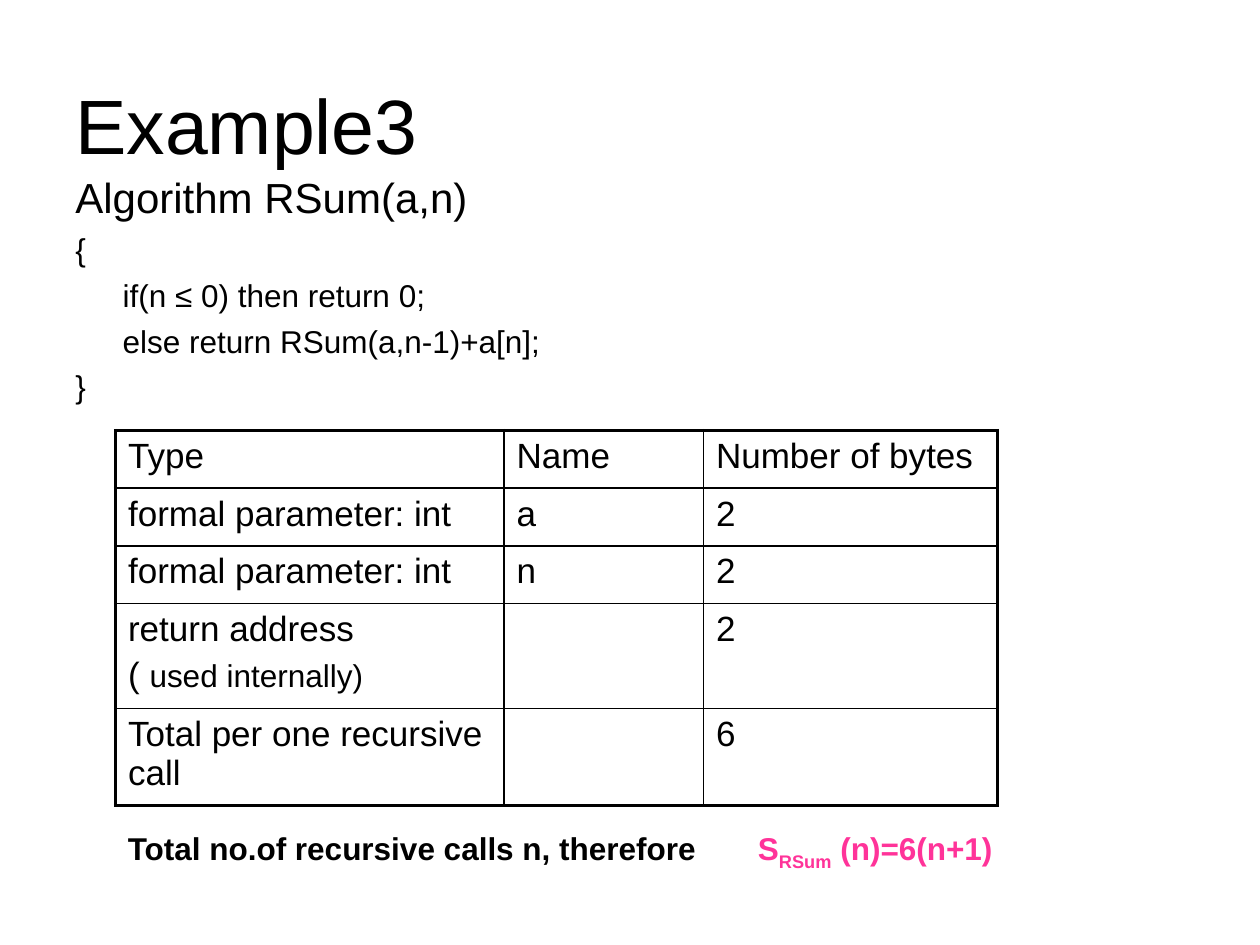
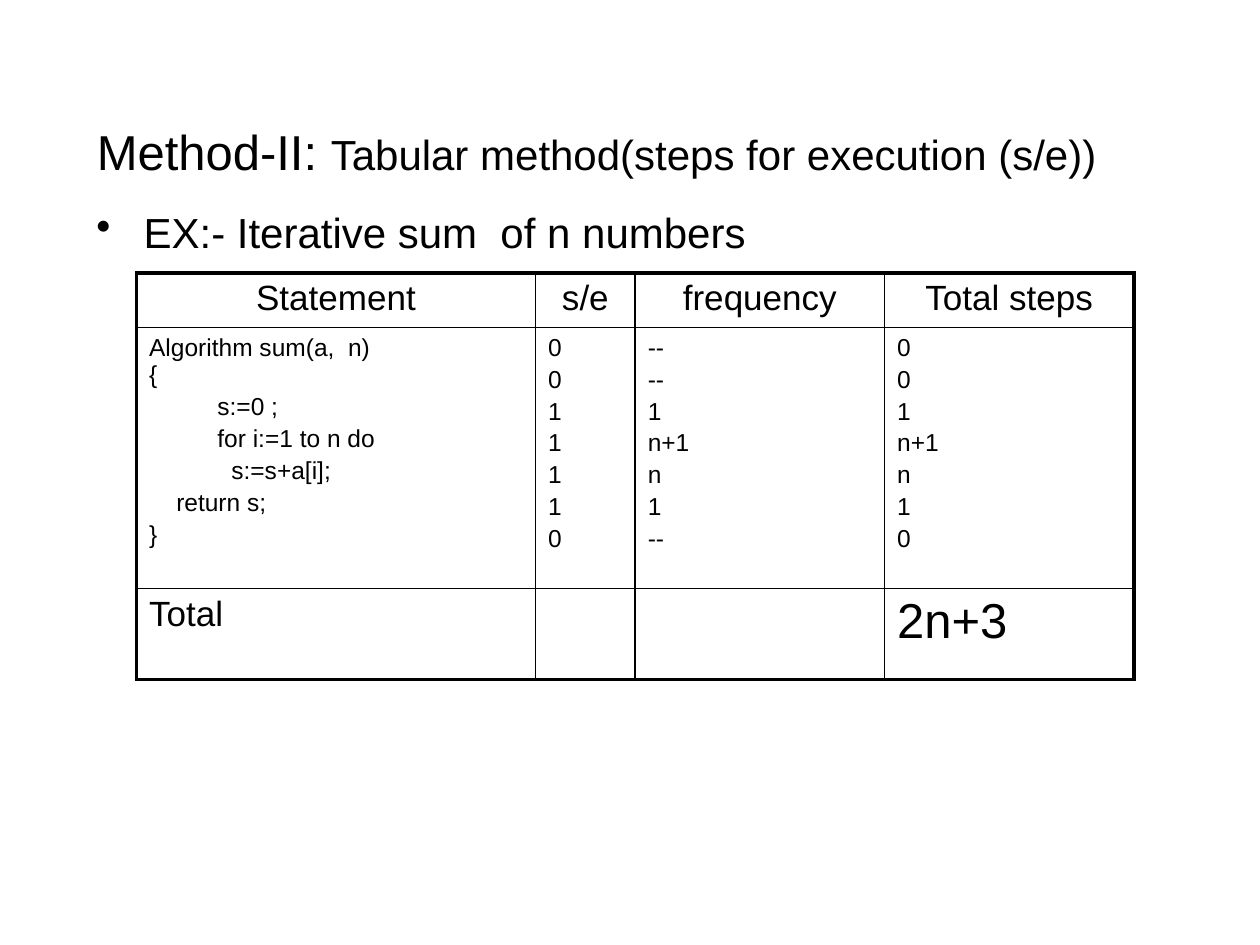
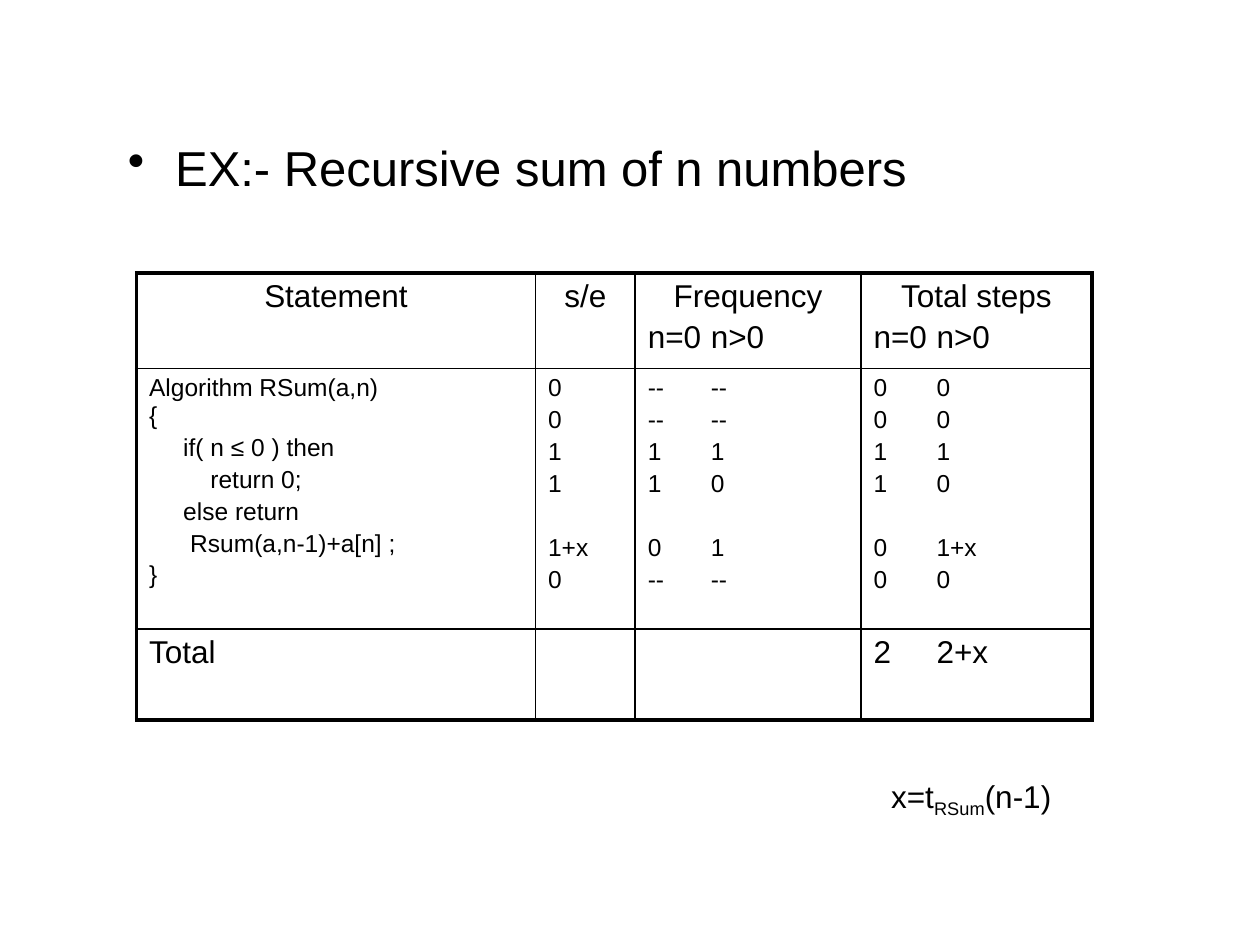
from dataclasses import dataclass

from lxml import etree
from pptx import Presentation
from pptx import util as u
from pptx.dml.color import RGBColor
from pptx.enum import shapes, text
from pptx.oxml.ns import qn


@dataclass(frozen=True)
class Theme:
    font: str = "Arial"
    ink: str = "000000"
    paper: str = "FFFFFF"
    accent: str = "FF3399"
    title: float = 44
    heading: float = 28
    body: float = 24
    cell: float = 20
    small: float = 18
    code: float = 14
    leading: float = 0.18  # space before a line, as a share of its size
    hanging: float = 27
    outer_border: float = 2.25
    inner_border: float = 1
    row_heights: tuple = (149, 52)  # statement and total rows


THEME = Theme()
CENTER = text.PP_ALIGN.CENTER
MIDDLE = text.MSO_ANCHOR.MIDDLE
TOP = text.MSO_ANCHOR.TOP


# Text
def line(content, **format):
    """A line with its own format; content is a string or a list of runs."""
    return content, format


def write_run(paragraph, content, size, bold=False, color=THEME.ink, subscript=False):
    run = paragraph.add_run()
    run.text = content
    font = run.font
    font.name, font.size, font.bold = THEME.font, u.Pt(size), bold
    font.color.rgb = RGBColor.from_string(color)
    if subscript:
        run._r.get_or_add_rPr().set("baseline", "-25000")


def write_paragraph(paragraph, content, size=THEME.small, bold=False, align=None,
                    before=0, indent=0, bullet=False, tab=None):
    paragraph.alignment = align
    paragraph.space_before = u.Pt(before)
    properties = paragraph._p.get_or_add_pPr()
    properties.set("marL", str(u.Pt(THEME.hanging if bullet else indent)))
    properties.set("indent", str(u.Pt(-THEME.hanging if bullet else 0)))
    if bullet:
        etree.SubElement(properties, qn("a:buChar"), char="•")
    if tab:
        stops = etree.SubElement(properties, qn("a:tabLst"))
        etree.SubElement(stops, qn("a:tab"), pos=str(u.Pt(tab)), algn="l")
    for run in [(content, {})] if isinstance(content, str) else content:
        run_text, run_format = run
        write_run(paragraph, run_text, **{"size": size, "bold": bold, **run_format})


def write_lines(frame, lines, **shared):
    for number, item in enumerate(lines):
        content, own = (item, {}) if isinstance(item, str) else item
        format = {**shared, **own}
        if number:
            format.setdefault("before", round(THEME.leading * format["size"], 1))
        paragraph = frame.add_paragraph() if number else frame.paragraphs[0]
        write_paragraph(paragraph, content, **format)


# Boxes
def set_frame(frame, anchor, inset_left, inset_top):
    frame.word_wrap = True
    frame.vertical_anchor = anchor
    frame.margin_left, frame.margin_top = u.Pt(inset_left), u.Pt(inset_top)


def add_text(slide, box, lines, anchor=TOP, inset_left=7.2, inset_top=6.5, **format):
    shape = slide.shapes.add_textbox(*map(u.Pt, box))
    set_frame(shape.text_frame, anchor, inset_left, inset_top)
    write_lines(shape.text_frame, lines, **format)


def add_panel(slide, box, lines, anchor=MIDDLE, inset_top=3.6, **format):
    shape = slide.shapes.add_shape(shapes.MSO_SHAPE.RECTANGLE, *map(u.Pt, box))
    shape.shadow.inherit = False
    shape.fill.solid()
    shape.fill.fore_color.rgb = RGBColor.from_string(THEME.paper)
    shape.line.color.rgb = RGBColor.from_string(THEME.paper)
    shape.line.width = u.Pt(0.75)
    set_frame(shape.text_frame, anchor, 7.2, inset_top)
    write_lines(shape.text_frame, lines, **format)


# Tables
def set_borders(cell, outer_edges):
    properties = cell._tc.get_or_add_tcPr()
    for position, (edge, is_outer) in enumerate(outer_edges.items()):
        width = THEME.outer_border if is_outer else THEME.inner_border
        border = etree.Element(qn(f"a:{edge}"), w=str(u.Pt(width)))
        fill = etree.SubElement(border, qn("a:solidFill"))
        etree.SubElement(fill, qn("a:srgbClr"), val=THEME.ink)
        properties.insert(position, border)


def add_grid(slide, left, top, widths, heights, rows, **shared):
    """Each cell is a list of lines, or a pair of such a list and its format."""
    frame = slide.shapes.add_table(len(heights), len(widths), u.Pt(left), u.Pt(top),
                                   u.Pt(sum(widths)), u.Pt(sum(heights)))
    table = frame.table
    table.first_row = table.horz_banding = False
    for column, width in zip(table.columns, widths):
        column.width = u.Pt(width)
    for row, height in zip(table.rows, heights):
        row.height = u.Pt(height)
    for y, contents in enumerate(rows):
        for x, content in enumerate(contents):
            cell = table.cell(y, x)
            cell.fill.background()
            set_borders(cell, {"lnL": x == 0, "lnR": x == len(widths) - 1,
                               "lnT": y == 0, "lnB": y == len(heights) - 1})
            lines, own = content if isinstance(content, tuple) else (content, {})
            write_lines(cell.text_frame, lines, **{**shared, **own})


def code_cell(lines):
    return lines, {"size": THEME.code}


def heading_cell(label):
    return [label], {"align": CENTER}


# Slides
def build_space_example(slide):
    add_text(slide, (36, 21.6, 648, 90), ["Example3"], anchor=MIDDLE,
             inset_top=11.6, size=THEME.title)
    add_text(slide, (36, 96, 318, 356), [
        line("Algorithm RSum(a,n)", size=THEME.body),
        "{",
        line("if(n ≤ 0) then return 0;", indent=THEME.hanging),
        line("else return RSum(a,n-1)+a[n];", indent=THEME.hanging),
        "}",
    ], size=THEME.small, before=4.6, inset_top=2)
    add_grid(slide, 66, 246, (222, 114, 168), (33, 33, 33, 60, 55.5), [
        [["Type"], ["Name"], ["Number of bytes"]],
        [["formal parameter: int"], ["a"], ["2"]],
        [["formal parameter: int"], ["n"], ["2"]],
        [["return address",
          line([("( ", {}), ("used internally)", {"size": THEME.small})])], [], ["2"]],
        [["Total per one recursive call"], [], ["6"]],
    ], size=THEME.cell)
    pink = {"color": THEME.accent}
    add_panel(slide, (66, 468, 606, 54), [line([
        ("Total no.of recursive calls n, therefore\t", {}),
        ("S", pink),
        ("RSum", {**pink, "subscript": True}),
        (" (n)=6(n+1)", pink),
    ])], anchor=TOP, inset_top=5.5, size=THEME.small, bold=True, tab=350)


def build_iterative_sum(slide):
    add_text(slide, (36, 42, 648, 70), [line([
        ("Method-II: ", {"size": THEME.heading}),
        ("Tabular method(steps for execution (s/e))", {}),
    ])], anchor=MIDDLE, inset_left=19.4, inset_top=21.6, size=THEME.body)
    add_text(slide, (48, 111.6, 480, 68), ["EX:- Iterative sum  of n numbers"],
             size=THEME.body, bullet=True)
    steps = ["0", "0", "1", "n+1", "n", "1", "0"]
    add_grid(slide, 78, 156, (228, 57, 142.5, 142.5), (31, *THEME.row_heights), [
        [heading_cell(label) for label in ("Statement", "s/e", "frequency", "Total steps")],
        [code_cell(["Algorithm sum(a,  n)",
                    line("{", before=0),
                    line("s:=0 ;", indent=39),
                    line("for i:=1 to n do", indent=39),
                    line("s:=s+a[i];", indent=47),
                    line("return s;", indent=15.5),
                    "}"]),
         code_cell(list("0011110")),
         code_cell(["--" if step == "0" else step for step in steps]),
         code_cell(steps)],
        [["Total"], [], [], (["2n+3"], {"size": THEME.heading})],
    ], size=THEME.cell)


def build_recursive_sum(slide):
    add_text(slide, (66, 72, 480, 68), ["EX:- Recursive sum of n numbers"],
             size=THEME.heading, bullet=True)
    skipped = 21  # the "else return" line has no count of its own

    def counts(values, **format):
        *head, call, end = values
        return [line(item, **format) for item in head] + [
            line(call, before=skipped, **format), line(end, **format)]

    def case_heading(label):
        return [line(label, align=CENTER), line("n=0\tn>0", tab=75.5)]

    add_grid(slide, 78, 156, (228, 57, 129, 132), (54.5, *THEME.row_heights), [
        [heading_cell("Statement"), heading_cell("s/e"),
         case_heading("Frequency"), case_heading("Total steps")],
        [code_cell(["Algorithm RSum(a,n)",
                    line("{", before=0),
                    line("if( n ≤ 0 ) then", indent=19.5),
                    line("return 0;", indent=35),
                    line("else return", indent=19.5),
                    line("Rsum(a,n-1)+a[n] ;", indent=23.5),
                    "}"]),
         code_cell(counts(["0", "0", "1", "1", "1+x", "0"])),
         code_cell(counts(["--\t--", "--\t--", "1\t1", "1\t0", "0\t1", "--\t--"], tab=77)),
         code_cell(counts(["0\t0", "0\t0", "1\t1", "1\t0", "0\t1+x", "0\t0"], tab=66))],
        [["Total"], [], [], [line("2\t2+x", tab=59.5)]],
    ], size=THEME.small)
    add_panel(slide, (480, 432, 150, 48), [line([
        ("x=t", {}), ("RSum", {"subscript": True}), ("(n-1)", {}),
    ])], size=THEME.small, align=CENTER)


def main():
    presentation = Presentation()
    presentation.slide_width, presentation.slide_height = u.Pt(720), u.Pt(540)
    blank = presentation.slide_layouts[6]
    for build in (build_space_example, build_iterative_sum, build_recursive_sum):
        build(presentation.slides.add_slide(blank))
    presentation.save("out.pptx")


if __name__ == "__main__":
    main()
